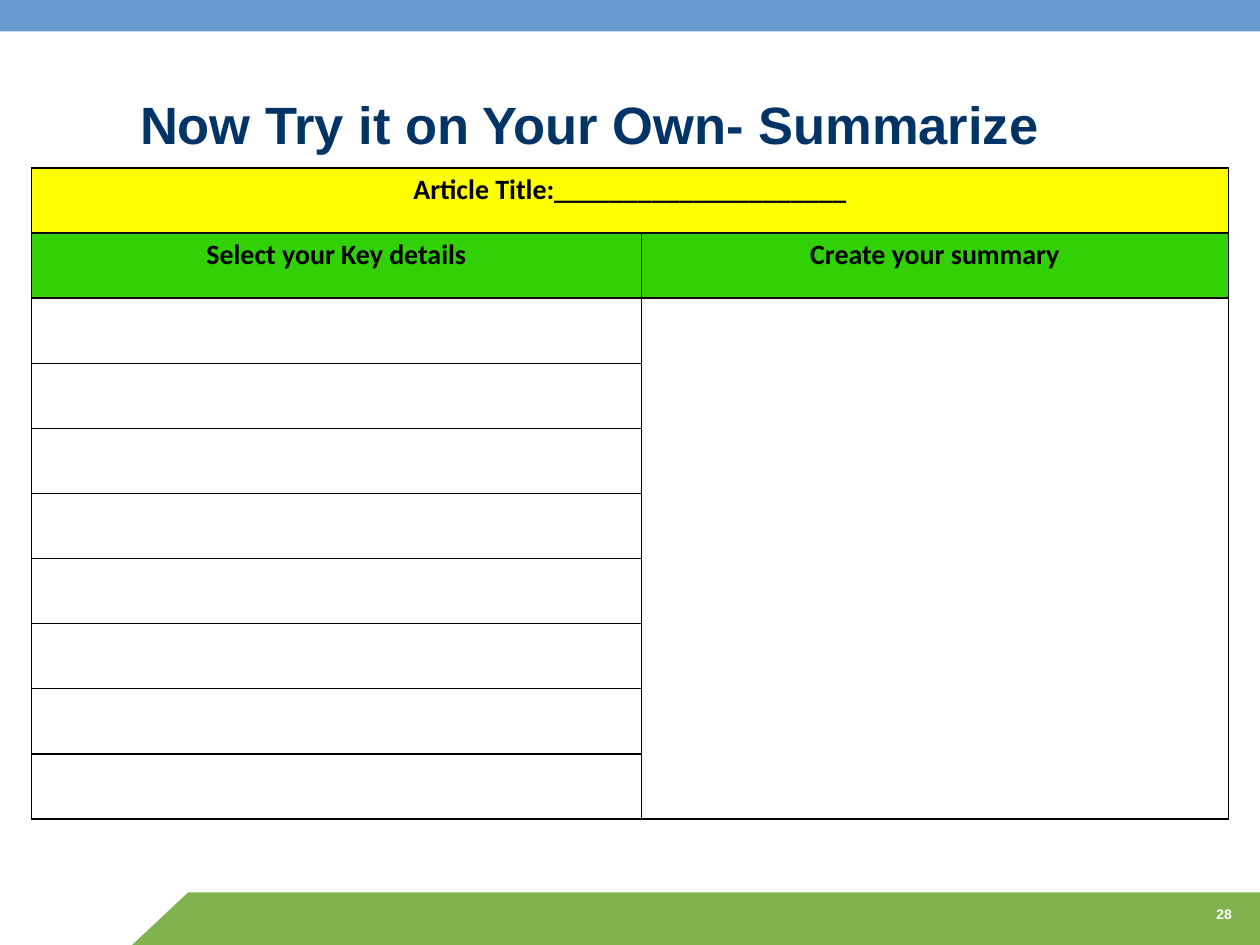
"""Build the summary worksheet slide with its key details table."""
from lxml import etree
from pptx import Presentation
from pptx.dml.color import RGBColor
from pptx.enum.shapes import MSO_SHAPE
from pptx.enum.text import MSO_ANCHOR, PP_ALIGN
from pptx.oxml.ns import qn
from pptx.util import Pt

RECT, WEDGE = MSO_SHAPE.RECTANGLE, MSO_SHAPE.RIGHT_TRIANGLE
CENTER, RIGHT = PP_ALIGN.CENTER, PP_ALIGN.RIGHT
BOTTOM = MSO_ANCHOR.BOTTOM

WHITE = RGBColor(0xFF, 0xFF, 0xFF)
BLACK = RGBColor(0, 0, 0)
INK = RGBColor(0x02, 0x02, 0x02)
NAVY = RGBColor(0x00, 0x33, 0x66)
BLUE = RGBColor(0x66, 0x99, 0xCC)
GREEN = RGBColor(0x80, 0xB3, 0x4D)
LIME = RGBColor(0x31, 0xD1, 0x05)
YELLOW = RGBColor(0xFF, 0xFF, 0x00)

ROWS = 10
ROW_H = 37.2
COLS = [348.5, 335.5]


def write(frame, text, size, face, color, align):
    para = frame.paragraphs[0]
    para.alignment = align
    run = para.add_run()
    run.text = text
    font = run.font
    font.size, font.name, font.bold = Pt(size), face, True
    font.color.rgb = color
    return para


def border(cell):
    props = cell._tc.get_or_add_tcPr()
    for side in ("lnL", "lnR", "lnT", "lnB"):
        line = etree.SubElement(props, qn(f"a:{side}"), w=str(Pt(1)))
        fill = etree.SubElement(line, qn("a:solidFill"))
        etree.SubElement(fill, qn("a:srgbClr"), val=str(BLACK))


prs = Presentation()
prs.slide_width, prs.slide_height = Pt(720), Pt(540)
slide = prs.slides.add_slide(prs.slide_layouts[5])
shapes = slide.shapes

bands = [
    (RECT, 107.5, 510, 612.5, 30, GREEN),
    (WEDGE, 75.5, 510, 32, 30, GREEN),
    (RECT, 0, 0, 720, 18, BLUE),
]
for kind, left, top, width, height, color in bands:
    band = shapes.add_shape(kind, Pt(left), Pt(top), Pt(width), Pt(height))
    band.shadow.inherit = False
    band.fill.solid()
    band.fill.fore_color.rgb = color
    band.line.fill.background()
    if kind == WEDGE:
        band._element.spPr.xfrm.set("flipH", "1")

title = shapes.title
title.left, title.top, title.width, title.height = Pt(31), Pt(44), Pt(612), Pt(48)
title.text_frame.vertical_anchor = BOTTOM
write(title.text_frame, "Now Try it on Your Own- Summarize", 30, "Arial", NAVY, CENTER)

frame = shapes.add_table(
    ROWS, 2, Pt(18), Pt(96), Pt(sum(COLS)), Pt(ROWS * ROW_H))
table = frame.table
table.first_row = table.horz_banding = False
for col, width in zip(table.columns, COLS):
    col.width = Pt(width)
for row in table.rows:
    row.height = Pt(ROW_H)
for cell in table.iter_cells():
    border(cell)
    cell.fill.background()
table.cell(0, 0).merge(table.cell(0, 1))
table.cell(2, 1).merge(table.cell(ROWS - 1, 1))

heads = [
    (0, 0, "Article Title:" + "_" * 21, YELLOW),
    (1, 0, "Select your Key details", LIME),
    (1, 1, "Create your summary", LIME),
]
for row, col, text, color in heads:
    cell = table.cell(row, col)
    cell.fill.solid()
    cell.fill.fore_color.rgb = color
    cell.margin_left = cell.margin_right = Pt(5)
    cell.margin_top = cell.margin_bottom = Pt(0)
    para = write(cell.text_frame, text, 16, "Calibri", INK, CENTER)
    para.line_spacing = 1.15

number = shapes.add_textbox(Pt(618), Pt(514), Pt(93), Pt(18))
number.text_frame.word_wrap = True
write(number.text_frame, "28", 8, "Arial", WHITE, RIGHT)

prs.save("out.pptx")
